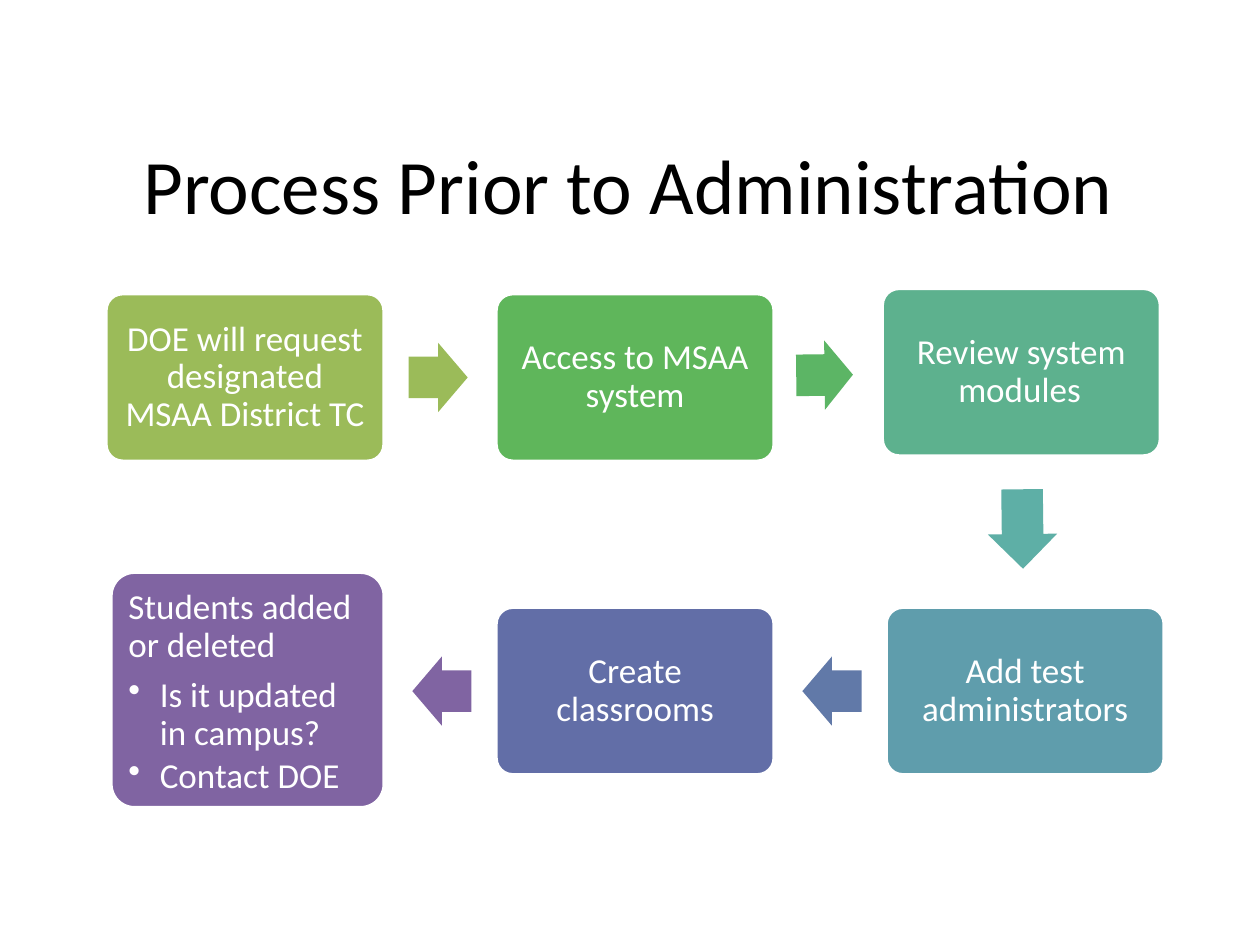
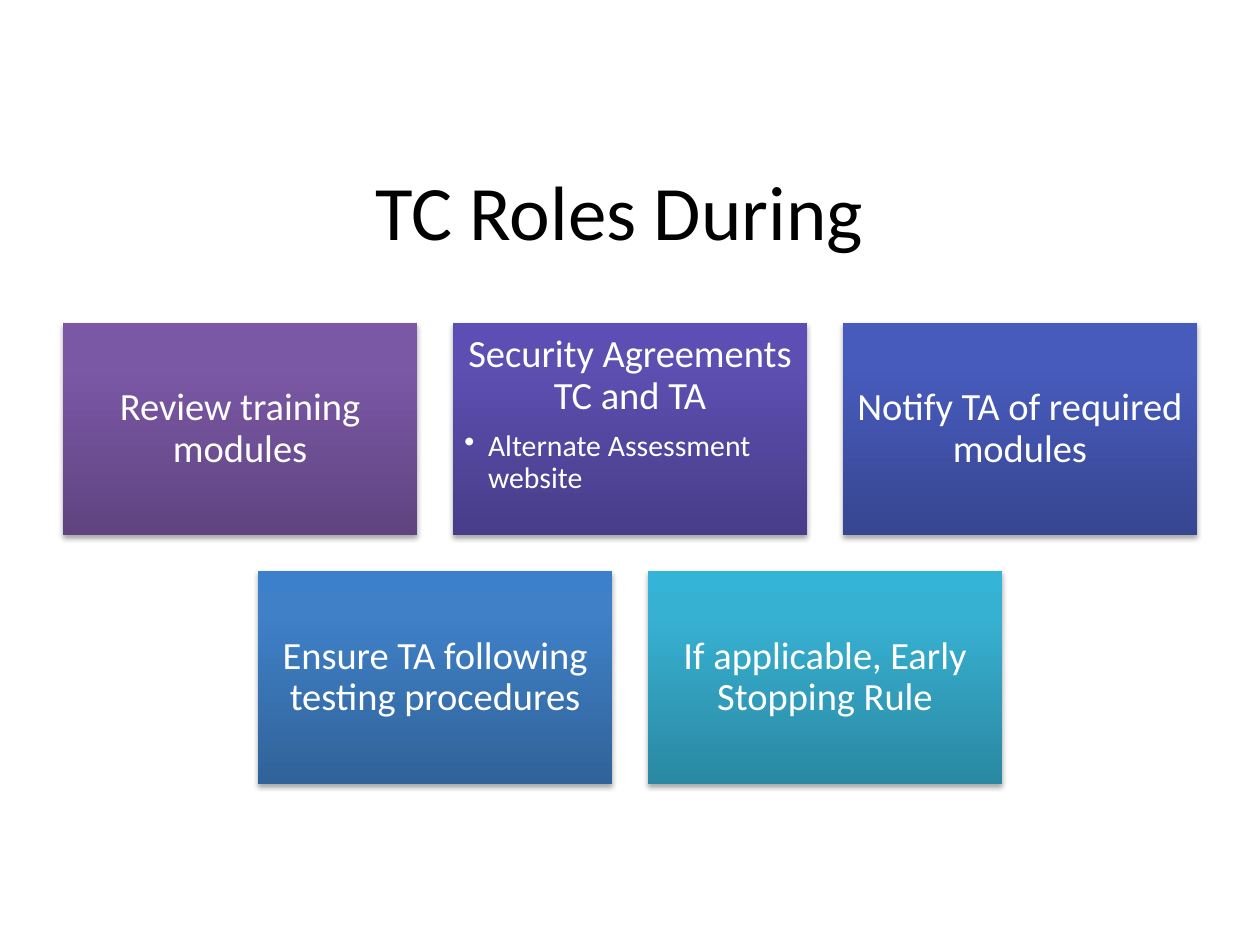
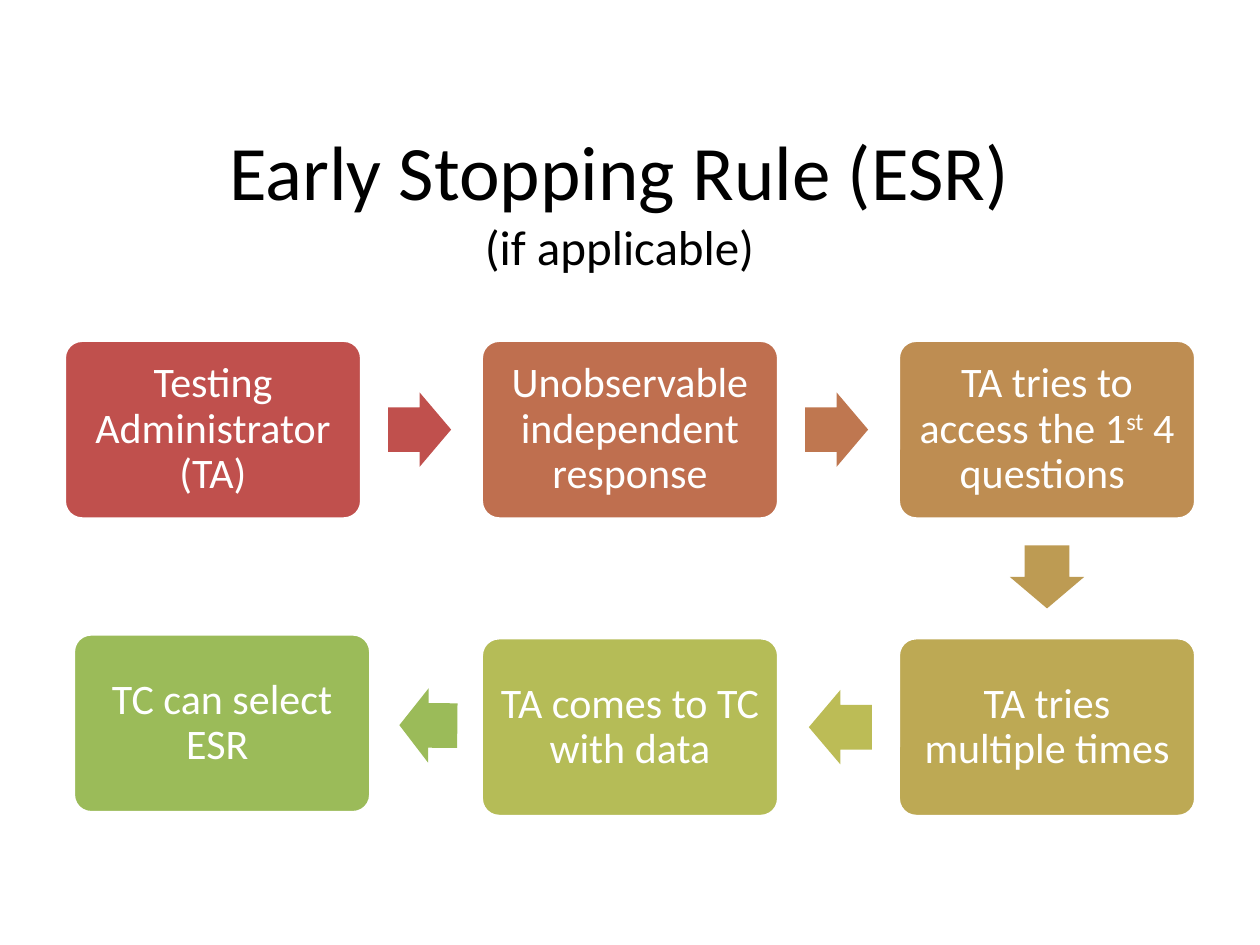
import copy
import math

import pptx
import pptx.dml.color
import pptx.enum.shapes
import pptx.enum.text
import pptx.oxml.ns
import pptx.util
from lxml import etree

Pt = pptx.util.Pt
SHAPE = pptx.enum.shapes.MSO_SHAPE
ALIGN = pptx.enum.text.PP_ALIGN
ANCHOR = pptx.enum.text.MSO_ANCHOR
qn = pptx.oxml.ns.qn

FONT = "Calibri"
HEX = {
    "ink": "000000", "white": "FFFFFF",
    "lime": "9BBB59", "green": "5FB65B", "leaf": "5CB565", "mint": "5DB18E",
    "teal": "5EAFA6", "sea": "5F9DAC", "steel": "6179A8", "slate": "626EA7",
    "plum": "8064A2",
    "red": "C0504D", "rust": "BF6F4F", "clay": "BF7750", "tan": "BE8D52",
    "sand": "BD9B53", "gold": "BDA954", "olive": "BCBC56", "moss": "B5BC57",
}
# Gradients run from the bottom edge to the top
STOPS = (0, 0.8, 1)
FADES = {
    "purple": ("5F4480", "7B58A6", "7C57A8"),
    "violet": ("483D89", "5D4FB1", "5C4EB4"),
    "indigo": ("374691", "475BBC", "455ABF"),
    "blue": ("306399", "3F80C7", "3C80CB"),
    "cyan": ("2A88A2", "37B1D2", "34B4D6"),
}


def rgb(code):
    return pptx.dml.color.RGBColor.from_string(code)


def write(frame, text, size=20, color="white", align=ALIGN.CENTER,
          line=None, after=0, indent=0):
    """Add a paragraph; text is a string or a list of (text, size, raise) runs."""
    para = frame.paragraphs[0]
    if para.runs:
        para = frame.add_paragraph()
    para.alignment = align
    if line:
        para.line_spacing = line
    para.space_after = Pt(after)
    if indent:
        props = para._p.get_or_add_pPr()
        props.set("marL", str(Pt(indent)))
        props.set("indent", str(-Pt(indent)))
        etree.SubElement(props, qn("a:buChar")).set("char", "•")
    runs = [(text, size, 0)] if isinstance(text, str) else text
    for words, points, lift in runs:
        run = para.add_run()
        run.text = words
        run.font.name = FONT
        run.font.size = Pt(points)
        run.font.color.rgb = rgb(HEX[color])
        if lift:
            run._r.get_or_add_rPr().set("baseline", str(lift * 1000))


class Deck:
    def __init__(self):
        self.show = pptx.Presentation()
        self.show.slide_width, self.show.slide_height = Pt(720), Pt(540)
        self.slide = None

    def page(self):
        self.slide = self.show.slides.add_slide(self.show.slide_layouts[6])

    def title(self, left, top, height, *lines):
        box = self.slide.shapes.add_textbox(Pt(left), Pt(top), Pt(648), Pt(height))
        frame = box.text_frame
        frame.word_wrap = True
        frame.vertical_anchor = ANCHOR.MIDDLE
        for text, size in lines:
            write(frame, text, size=size, color="ink")

    def shape(self, kind, left, top, width, height):
        item = self.slide.shapes.add_shape(
            kind, Pt(left), Pt(top), Pt(width), Pt(height))
        item.shadow.inherit = False
        item.line.fill.background()
        return item

    def solid(self, item, color):
        item.fill.solid()
        item.fill.fore_color.rgb = rgb(HEX[color])

    def fade(self, item, name):
        item.fill.gradient()
        item.fill.gradient_angle = 90
        stops = item._element.spPr.find(".//" + qn("a:gsLst"))
        stops.append(copy.deepcopy(stops[0]))
        for stop, place, code in zip(item.fill.gradient_stops, STOPS, FADES[name]):
            stop.position = place
            stop.color.rgb = rgb(code)

    def shade(self, item):
        effects = item._element.spPr.find(qn("a:effectLst"))
        drop = etree.SubElement(
            effects, qn("a:outerShdw"), blurRad=str(Pt(3.1)),
            dist=str(Pt(1.8)), dir="5400000", rotWithShape="0")
        tint = etree.SubElement(drop, qn("a:srgbClr"), val=HEX["ink"])
        etree.SubElement(tint, qn("a:alpha"), val="35000")

    def label(self, item, text, size, pad, points=(), small=None, indent=18,
              align=ALIGN.CENTER):
        frame = item.text_frame
        frame.word_wrap = True
        frame.vertical_anchor = ANCHOR.TOP if points else ANCHOR.MIDDLE
        frame.margin_left = frame.margin_right = Pt(pad)
        frame.margin_top = frame.margin_bottom = Pt(pad)
        small = small or size
        write(frame, text, size=size, align=align, line=0.9,
              after=0.35 * size if points else 0)
        for point in points:
            write(frame, point, size=small, align=ALIGN.LEFT, line=0.9,
                  after=0.15 * small, indent=indent)

    def step(self, left, top, width, height, color):
        item = self.shape(SHAPE.ROUNDED_RECTANGLE, left, top, width, height)
        item.adjustments[0] = 0.1
        self.solid(item, color)
        item.line.color.rgb = rgb(HEX["white"])
        item.line.width = Pt(2)
        return item

    def arrow(self, mid_x, mid_y, length, breadth, turn, color):
        item = self.shape(SHAPE.RIGHT_ARROW, mid_x - length / 2,
                          mid_y - breadth / 2, length, breadth)
        item.adjustments[0], item.adjustments[1] = 0.6, 0.5
        item.rotation = turn % 360
        self.solid(item, color)

    def flow(self, steps, left, top, width, height, pitch, drop, size, pad,
             length, breadth, gap):
        """Steps run right along the top row, down, then back to the left."""
        route = ((0, 0, 0), (1, 0, 0), (2, 0, 90),
                 (2, 1, 180), (1, 1, 180), (0, 1, 0))
        for (col, row, turn), data in zip(route, steps):
            dx, dy = data.get("shift", (0, 0))
            wide, high = data.get("area", (width, height))
            x, y = left + col * pitch + dx, top + row * drop + dy
            item = self.step(x, y, wide, high, data["fill"])
            self.label(item, data["text"], size, pad, **data.get("list", {}))
            if "next" in data:
                long = data.get("long", length)
                dx, dy = data.get("nudge", (0, 0))
                reach, angle = gap + long / 2, math.radians(turn)
                self.arrow(x + wide / 2 + math.cos(angle) * (wide / 2 + reach) + dx,
                           y + high / 2 + math.sin(angle) * (high / 2 + reach) + dy,
                           long, breadth, turn + data.get("tilt", 0), data["next"])


def prior(deck):
    deck.page()
    deck.title(35.3, 60, 90, ("Process Prior to Administration", 44))
    steps = [
        dict(text="DOE will request designated MSAA District TC",
             fill="lime", next="lime"),
        dict(text="Access to MSAA system", fill="green", next="leaf",
             long=32.4, tilt=-0.7, nudge=(-1.4, -1.4)),
        dict(text=[("Review system modules", 20, 0), ("\t", 18, 0)],
             fill="mint", next="teal", shift=(-2.2, -3),
             long=45.4, tilt=-0.7, nudge=(0.7, 5)),
        dict(text="Add test administrators", fill="sea", next="steel"),
        dict(text="Create classrooms", fill="slate", next="plum"),
        dict(text="Students added or deleted", fill="plum",
             shift=(2.9, -20), area=(156.2, 134.6),
             list=dict(points=("Is it updated in campus?", "Contact DOE"),
                       align=ALIGN.LEFT)),
    ]
    deck.flow(steps, left=60.5, top=167.8, width=159, height=95.8, pitch=222.9,
              drop=179.2, size=20, pad=6, length=33.8, breadth=39.6, gap=14)


def roles(deck):
    deck.page()
    deck.title(30, 90, 60, ("TC Roles During", 44))
    left, top, width, height, gap = 36, 184.4, 202.5, 121.6, 20.3
    rows = [
        [("Review training modules", "purple", {}),
         ("Security Agreements TC and TA", "violet",
          dict(points=("Alternate Assessment website",), small=17, indent=13.5)),
         ("Notify TA of required modules", "indigo", {})],
        [("Ensure TA following testing procedures", "blue", {}),
         ("If applicable, Early Stopping Rule", "cyan", {})],
    ]
    for row, cards in enumerate(rows):
        for col, (text, name, more) in enumerate(cards):
            x = left + (col + row / 2) * (width + gap)
            item = deck.shape(SHAPE.RECTANGLE, x, top + row * (height + gap),
                              width, height)
            deck.fade(item, name)
            deck.shade(item)
            deck.label(item, text, 22, 6.6, **more)


def early(deck):
    deck.page()
    deck.title(30, 84, 60, ("Early Stopping Rule (ESR)", 44), ("(if applicable)", 28))
    steps = [
        dict(text="Testing Administrator (TA)", fill="red", next="red"),
        dict(text="Unobservable independent response", fill="rust", next="clay"),
        dict(text=[("TA tries to access the 1", 24, 0), ("st", 24, 30),
                   (" 4 questions ", 24, 0)], fill="tan", next="sand"),
        dict(text="TA tries multiple times", fill="gold", next="olive"),
        dict(text="TA comes to TC with data", fill="moss", next="lime",
             long=33.1, tilt=0.5, nudge=(1.4, -1)),
        dict(text="TC can select ESR ", fill="lime", shift=(5.2, -2.2)),
    ]
    deck.flow(steps, left=36.7, top=194.4, width=170, height=102.2, pitch=238.3,
              drop=170, size=24, pad=7.2, length=36, breadth=42.5, gap=15.1)


def main():
    deck = Deck()
    prior(deck)
    roles(deck)
    early(deck)
    deck.show.save("out.pptx")


if __name__ == "__main__":
    main()
